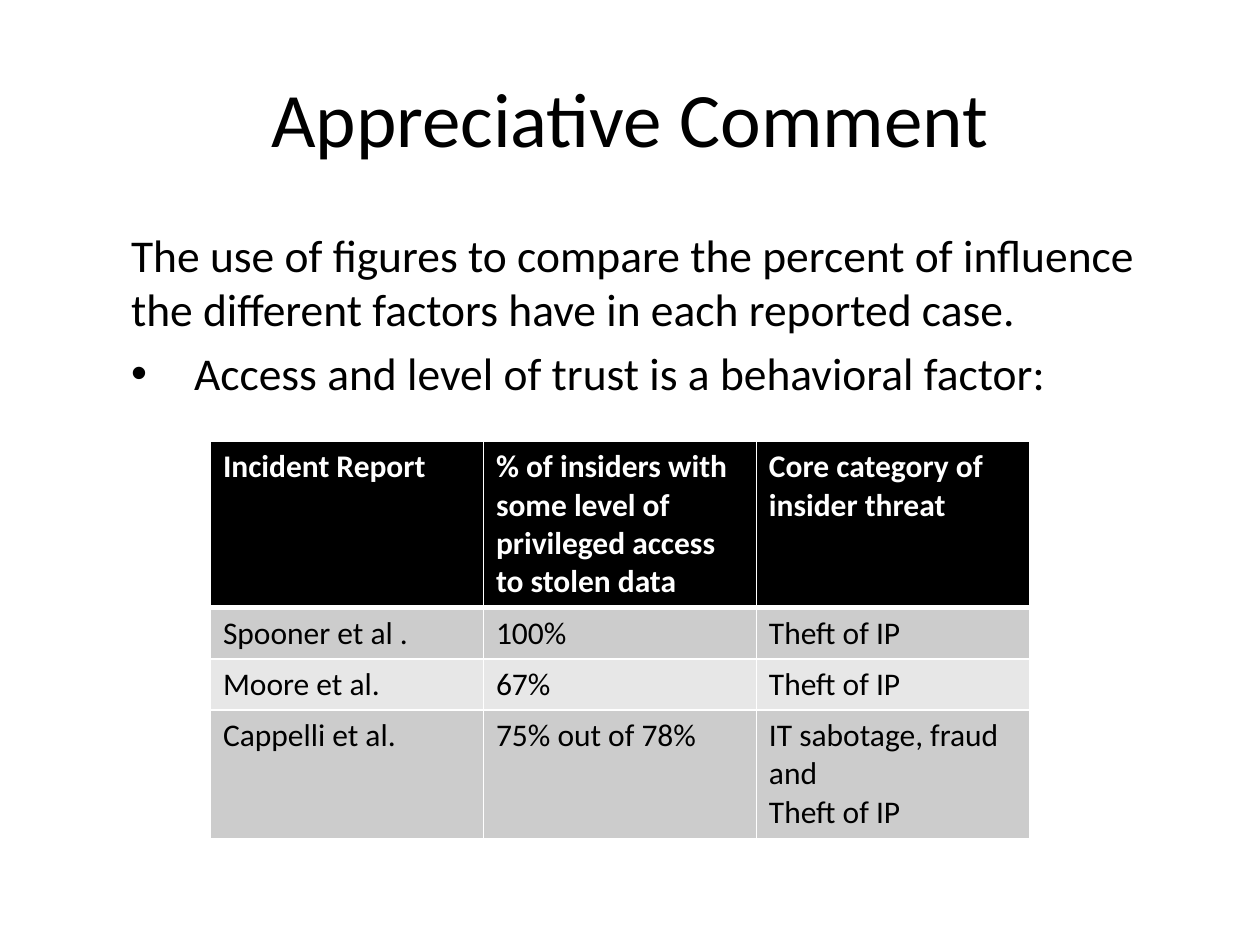
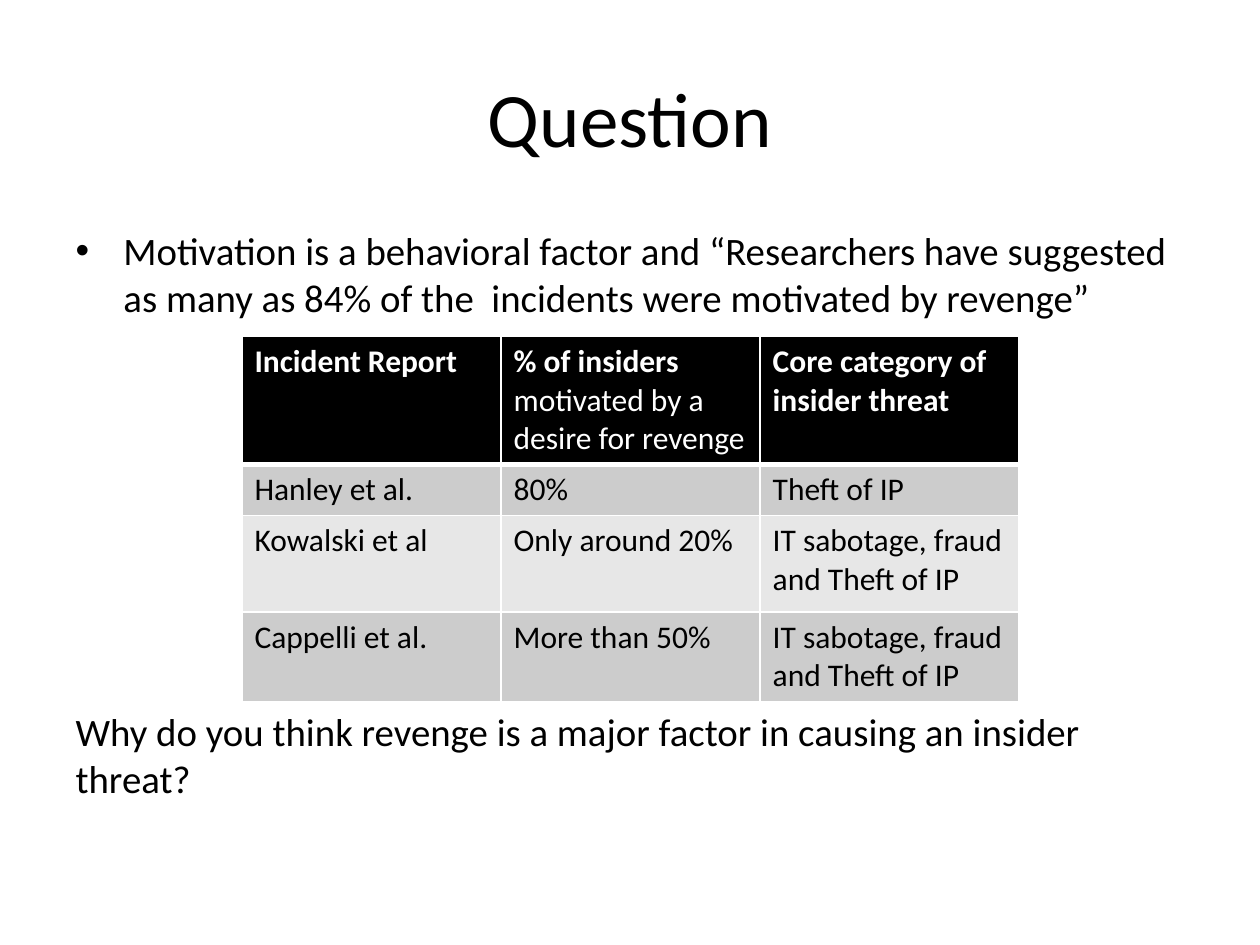
from dataclasses import dataclass

from lxml.etree import SubElement
from pptx import Presentation
from pptx.dml.color import RGBColor
from pptx.enum.text import MSO_AUTO_SIZE
from pptx.oxml.ns import qn
from pptx.util import Inches, Pt

BLACK = RGBColor(0x00, 0x00, 0x00)
WHITE = RGBColor(0xFF, 0xFF, 0xFF)
BAND_DARK = RGBColor(0xCC, 0xCC, 0xCC)
BAND_LIGHT = RGBColor(0xE7, 0xE7, 0xE7)

FONT = "Calibri"
TITLE_SIZE = 44
TABLE_SIZE = 18
SLIDE_WIDTH = Inches(10)
SLIDE_HEIGHT = Inches(7.5)
HEADER_RULE = 3
CELL_RULE = 1


@dataclass(frozen=True)
class BodyLine:
    """A body paragraph; the indents are inches, the gap a percentage of slide height."""

    text: str
    level: int = 0
    margin: float = 0
    hanging: float = 0
    gap_above: float = 0


@dataclass(frozen=True)
class ReportTable:
    """An incident table placed by percentages of the slide's size."""

    left: float
    top: float
    width: float
    row_heights: tuple[float, ...]
    rows: tuple[tuple[str, ...], ...]
    plain_header_tail: str = ""


@dataclass(frozen=True)
class Page:
    """The title, body text and table of one slide."""

    title: str
    body_size: float
    body: tuple[BodyLine, ...]
    table: ReportTable


PAGES = (
    Page(
        "Appreciative Comment",
        26,
        (
            BodyLine(
                "The use of figures to compare the percent of influence "
                "the different factors have in each reported case.",
                level=1,
                margin=0.44,
            ),
            BodyLine(
                "Access and level of trust is a behavioral factor:",
                level=1,
                margin=0.94,
                hanging=0.5,
            ),
        ),
        ReportTable(
            16.7,
            46.7,
            65,
            (17.5, 5.4, 5.4, 13.6),
            (
                (
                    "Incident Report",
                    "% of insiders with some level of privileged access to stolen data",
                    "Core category of insider threat",
                ),
                ("Spooner et al .", "100%", "Theft of IP"),
                ("Moore et al.", "67%", "Theft of IP"),
                (
                    "Cappelli et al.",
                    "75% out of 78%",
                    "IT sabotage, fraud and\nTheft of IP",
                ),
            ),
        ),
    ),
    Page(
        "Question",
        22.2,
        (
            BodyLine(
                "Motivation is a behavioral factor and “Researchers have suggested "
                "as many as 84% of the  incidents were motivated by revenge”",
                margin=0.38,
                hanging=0.38,
            ),
            BodyLine(
                "Why do you think revenge is a major factor in causing an insider threat?",
                gap_above=41,
            ),
        ),
        ReportTable(
            19.2,
            35.6,
            61.7,
            (13.5, 5.4, 10.2, 9.4),
            (
                (
                    "Incident Report",
                    "% of insiders motivated by a desire for revenge",
                    "Core category of insider threat",
                ),
                ("Hanley et al.", "80%", "Theft of IP"),
                ("Kowalski et al", "Only around 20%", "IT sabotage, fraud and Theft of IP"),
                ("Cappelli et al.", "More than 50%", "IT sabotage, fraud and Theft of IP"),
            ),
            plain_header_tail="motivated by a desire for revenge",
        ),
    ),
)


def across(percent: float) -> int:
    """Return a percentage of the slide's width."""
    return round(SLIDE_WIDTH * percent / 100)


def down(percent: float) -> int:
    """Return a percentage of the slide's height."""
    return round(SLIDE_HEIGHT * percent / 100)


def format_runs(frame, size: float, color: RGBColor = BLACK, bold: bool = False) -> None:
    """Give every run of a text frame the same font."""
    for para in frame.paragraphs:
        for span in para.runs:
            span.font.name = FONT
            span.font.size = Pt(size)
            span.font.color.rgb = color
            span.font.bold = bold


def set_indent(para, line: BodyLine) -> None:
    """Set the indents of a paragraph and show a bullet only when it hangs."""
    properties = para._p.get_or_add_pPr()
    properties.set("marL", str(Inches(line.margin)))
    properties.set("indent", str(-Inches(line.hanging)))
    if line.hanging:
        SubElement(properties, qn("a:buFont"), typeface="Arial")
        SubElement(properties, qn("a:buChar"), char="•")
    else:
        SubElement(properties, qn("a:buNone"))


def fill_body(frame, lines: tuple[BodyLine, ...], size: float) -> None:
    """Write the body paragraphs into the body placeholder."""
    frame.auto_size = MSO_AUTO_SIZE.NONE
    frame.text = "\n".join(line.text for line in lines)
    for para, line in zip(frame.paragraphs, lines):
        para.level = line.level
        if line.gap_above:
            para.space_before = down(line.gap_above)
        set_indent(para, line)
    format_runs(frame, size)


def set_borders(cell, bottom_width: float) -> None:
    """Draw white rules around a cell."""
    properties = cell._tc.get_or_add_tcPr()
    widths = {"lnL": CELL_RULE, "lnR": CELL_RULE, "lnT": CELL_RULE, "lnB": bottom_width}
    for position, (side, width) in enumerate(widths.items()):
        rule = SubElement(properties, qn(f"a:{side}"), w=str(Pt(width)))
        fill = SubElement(rule, qn("a:solidFill"))
        SubElement(fill, qn("a:srgbClr"), val=str(WHITE))
        properties.insert(position, rule)


def fill_cell(cell, text: str, row: int, plain_tail: str) -> None:
    """Write and style one cell according to its row."""
    is_header = row == 0
    frame = cell.text_frame
    has_tail = is_header and bool(plain_tail) and text.endswith(plain_tail)
    frame.text = text.removesuffix(plain_tail) if has_tail else text
    if has_tail:
        frame.paragraphs[0].add_run().text = plain_tail
    format_runs(frame, TABLE_SIZE, WHITE if is_header else BLACK, is_header)
    if has_tail:
        frame.paragraphs[0].runs[-1].font.bold = False
    cell.fill.solid()
    band = BAND_DARK if row % 2 else BAND_LIGHT
    cell.fill.fore_color.rgb = BLACK if is_header else band
    set_borders(cell, HEADER_RULE if is_header else CELL_RULE)
    if row == 1:
        top_rule = cell._tc.tcPr.find(qn("a:lnT"))
        top_rule.set("w", str(Pt(HEADER_RULE)))


def add_report_table(slide, report: ReportTable) -> None:
    """Add an incident table with equal columns."""
    column_count = len(report.rows[0])
    table = slide.shapes.add_table(
        len(report.rows),
        column_count,
        across(report.left),
        down(report.top),
        across(report.width),
        down(sum(report.row_heights)),
    ).table
    for column in table.columns:
        column.width = across(report.width / column_count)
    for row, (height, texts) in enumerate(zip(report.row_heights, report.rows)):
        table.rows[row].height = down(height)
        for column, text in enumerate(texts):
            fill_cell(table.cell(row, column), text, row, report.plain_header_tail)


def add_page(deck, page: Page) -> None:
    """Add one slide with its title, body and table."""
    slide = deck.slides.add_slide(deck.slide_layouts.get_by_name("Title and Content"))
    title = slide.shapes.title.text_frame
    title.text = page.title
    format_runs(title, TITLE_SIZE)
    fill_body(slide.placeholders[1].text_frame, page.body, page.body_size)
    add_report_table(slide, page.table)


def main() -> None:
    """Build and save the deck."""
    deck = Presentation()
    deck.slide_width = SLIDE_WIDTH
    deck.slide_height = SLIDE_HEIGHT
    for page in PAGES:
        add_page(deck, page)
    deck.save("out.pptx")


if __name__ == "__main__":
    main()
